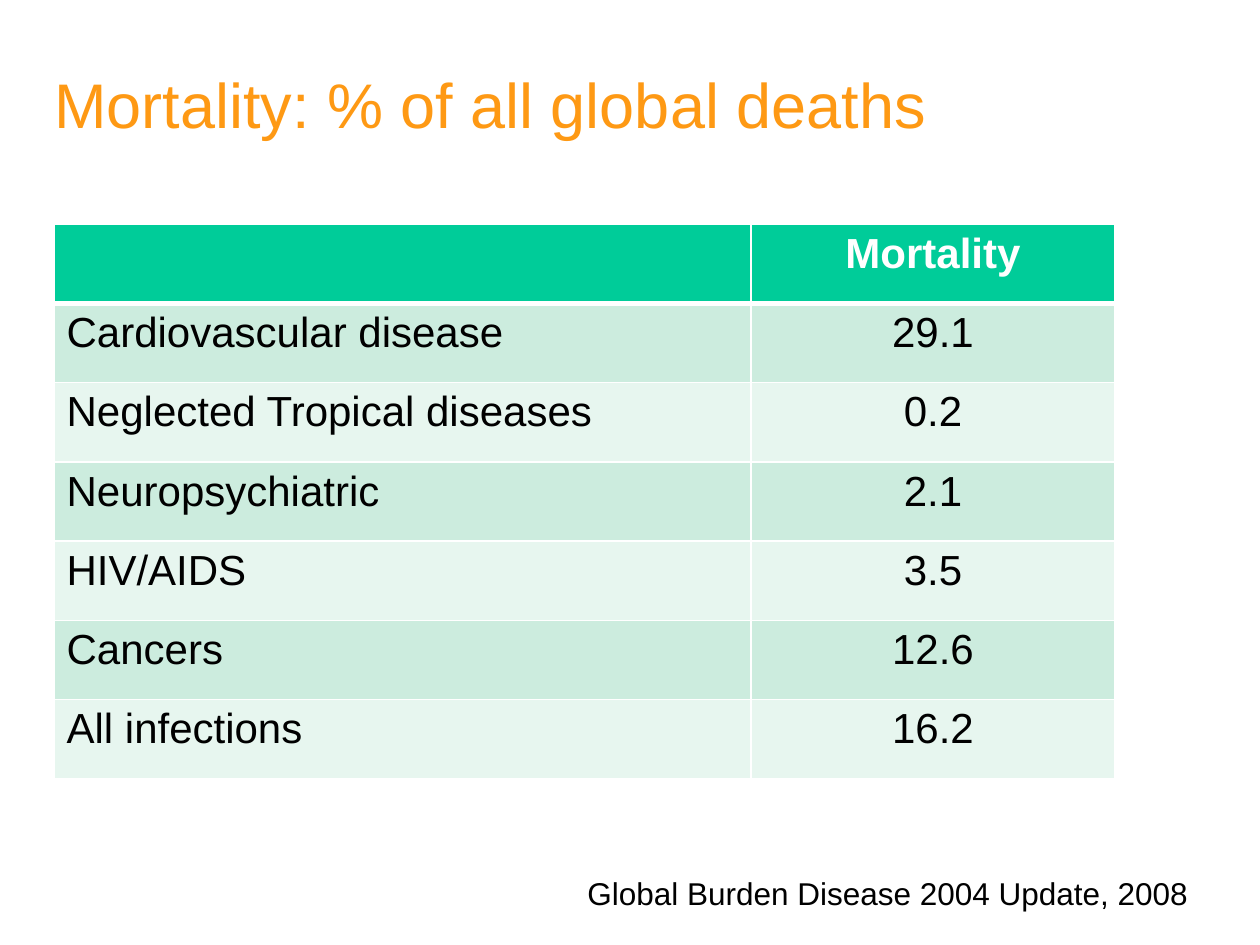
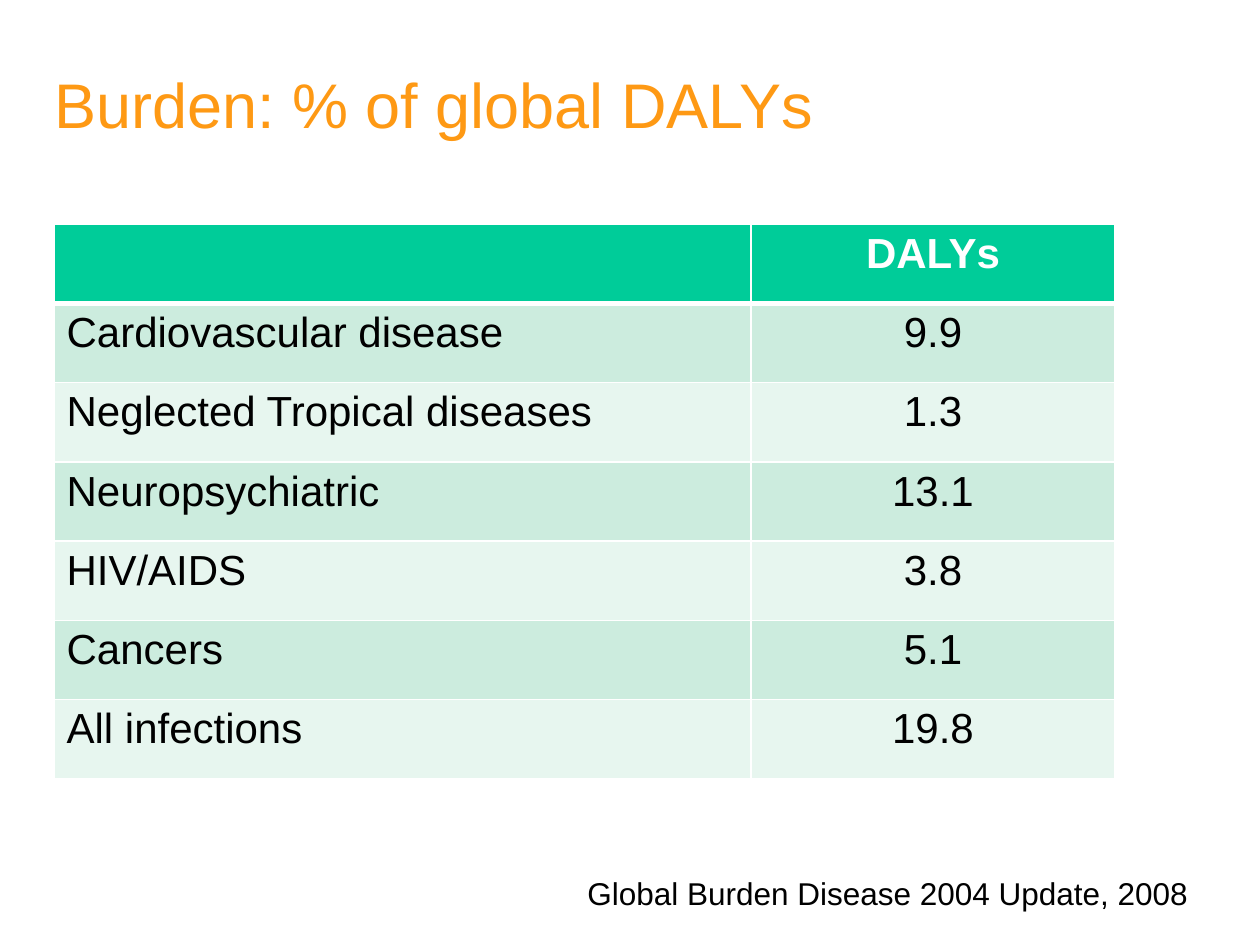
from lxml import etree
from pptx import Presentation
from pptx.dml.color import RGBColor
from pptx.enum.text import MSO_ANCHOR, PP_ALIGN
from pptx.oxml.ns import qn
from pptx.util import Emu, Pt

LEFT, CENTER = PP_ALIGN.LEFT, PP_ALIGN.CENTER
TOP, MIDDLE = MSO_ANCHOR.TOP, MSO_ANCHOR.MIDDLE

CAUSES = ["Cardiovascular disease", "Neglected Tropical diseases", "Neuropsychiatric",
          "HIV/AIDS", "Cancers", "All infections"]
SLIDES = [
    {"title": "Mortality: % of all global deaths", "measure": "Mortality",
     "values": ["29.1", "0.2", "2.1", "3.5", "12.6", "16.2"]},
    {"title": "Burden: % of global DALYs", "measure": "DALYs",
     "values": ["9.9", "1.3", "13.1", "3.8", "5.1", "19.8"]},
]
SOURCE = "Global Burden Disease 2004 Update, 2008"

COLORS = {"title": "FE9914", "text": "000000", "white": "FFFFFF",
          "header": "00CC99", "odd_row": "CCECDE", "even_row": "E7F6EF"}
FONT = "Arial"
EMU_PER_PX = 914400 / 126

SLIDE_SIZE = (1260, 945)
TITLE_BOX = (42, 24, 1071, 158)
SOURCE_BOX = (575, 868, 641, 50)
TABLE_BOX = (54, 224, 1061, 555)
COLUMN_WIDTHS = (697, 364)
THIN, THICK = 1, 3


def px(length):
    return Emu(round(length * EMU_PER_PX))


def color(name):
    return RGBColor.from_string(COLORS[name])


def style_paragraph(paragraph, size, color_name, bold=False, alignment=LEFT):
    paragraph.alignment = alignment
    font = paragraph.font
    font.name, font.size, font.bold = FONT, Pt(size), bold
    font.color.rgb = color(color_name)


def add_text(slide, box, text, size, color_name, anchor=TOP):
    frame = slide.shapes.add_textbox(*map(px, box)).text_frame
    frame.word_wrap = True
    frame.vertical_anchor = anchor
    frame.text = text
    style_paragraph(frame.paragraphs[0], size, color_name)


def set_borders(cell, top, bottom):
    """Draw white cell edges; top and bottom are widths in points."""
    properties = cell._tc.get_or_add_tcPr()
    for side, width in (("L", THIN), ("R", THIN), ("T", top), ("B", bottom)):
        line = etree.SubElement(properties, qn(f"a:ln{side}"), w=str(Pt(width)))
        fill = etree.SubElement(line, qn("a:solidFill"))
        etree.SubElement(fill, qn("a:srgbClr"), val=COLORS["white"])


def add_burden_table(slide, measure, values):
    rows = [("", measure), *zip(CAUSES, values)]
    table = slide.shapes.add_table(len(rows), len(COLUMN_WIDTHS), *map(px, TABLE_BOX)).table
    for column, width in zip(table.columns, COLUMN_WIDTHS):
        column.width = px(width)
    for row_index, row in enumerate(rows):
        table.rows[row_index].height = px(TABLE_BOX[3] / len(rows))
        is_header = row_index == 0
        band = "header" if is_header else "odd_row" if row_index % 2 else "even_row"
        for column_index, text in enumerate(row):
            cell = table.cell(row_index, column_index)
            set_borders(cell, top=THICK if row_index == 1 else THIN,
                        bottom=THICK if is_header else THIN)
            cell.fill.solid()
            cell.fill.fore_color.rgb = color(band)
            cell.text = text
            style_paragraph(cell.text_frame.paragraphs[0], 24,
                            "white" if is_header else "text", is_header,
                            CENTER if column_index else LEFT)


def main():
    presentation = Presentation()
    presentation.slide_width, presentation.slide_height = map(px, SLIDE_SIZE)
    blank_layout = presentation.slide_layouts[6]
    for content in SLIDES:
        slide = presentation.slides.add_slide(blank_layout)
        add_text(slide, TITLE_BOX, content["title"], 36, "title", MIDDLE)
        add_burden_table(slide, content["measure"], content["values"])
        add_text(slide, SOURCE_BOX, SOURCE, 18, "text")
    presentation.save("out.pptx")


if __name__ == "__main__":
    main()
